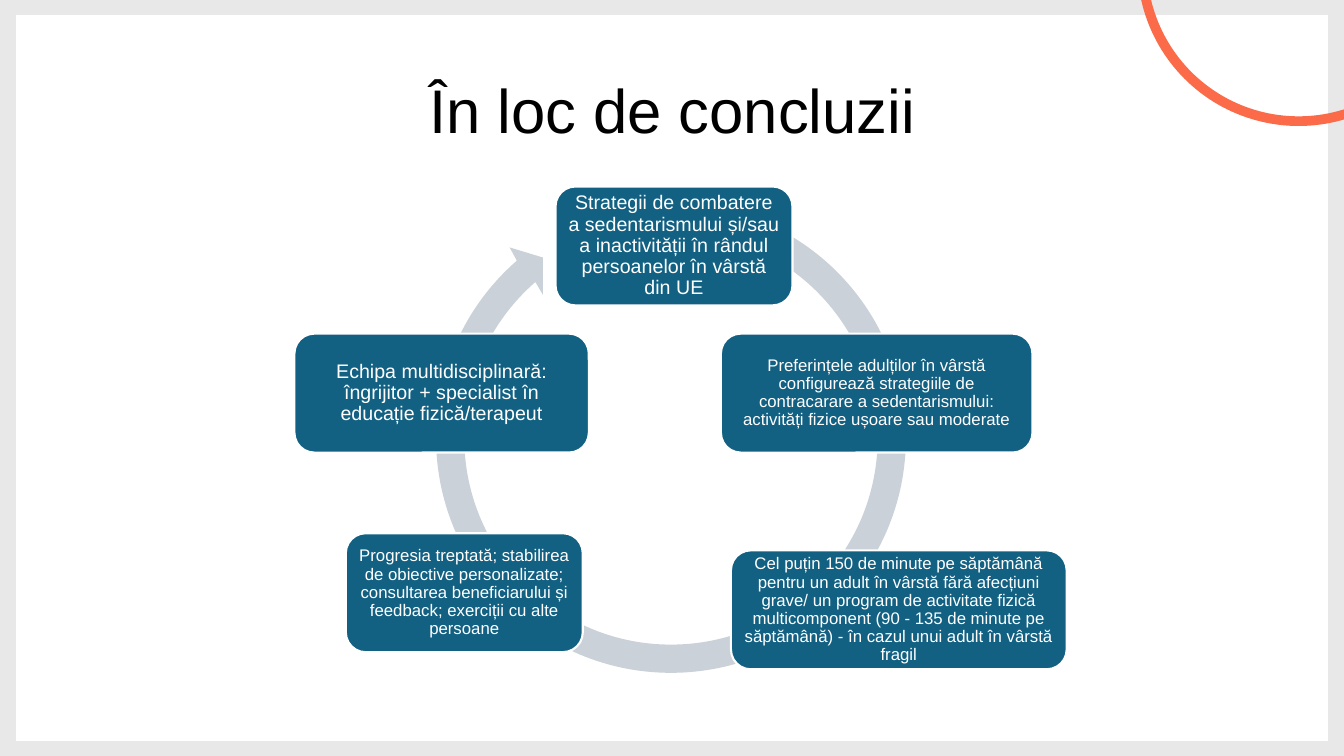
from dataclasses import dataclass
from math import cos, radians, sin, tan

from lxml import etree
from pptx import Presentation
from pptx.dml.color import RGBColor
from pptx.enum.shapes import MSO_SHAPE
from pptx.enum.text import MSO_ANCHOR, PP_ALIGN
from pptx.oxml.ns import qn
from pptx.util import Inches, Pt

RECTANGLE = MSO_SHAPE.RECTANGLE
ROUNDED = MSO_SHAPE.ROUNDED_RECTANGLE
DONUT = MSO_SHAPE.DONUT
MIDDLE = MSO_ANCHOR.MIDDLE
CENTER = PP_ALIGN.CENTER


@dataclass(frozen=True)
class Theme:
    """Colours, font and type sizes of the deck."""
    backdrop: str = "E8E8E8"
    panel: str = "FFFFFF"
    accent: str = "FB6B49"
    arrow: str = "CAD1D8"
    node: str = "126082"
    title: str = "000000"
    node_text: str = "FFFFFF"
    font: str = "Arial"
    title_size: int = 44
    large_size: int = 14
    small_size: int = 12


THEME = Theme()
NODE_HEIGHT = 1.18
RING_SIZE = 4.95
RING_ANGLES = (-70, 0, 90, 180, 229)
ARROWHEAD = ((-1.6, -1.89), (-1.27, -1.79), (-1.27, -1.42))
INSETS = {THEME.large_size: 0.06, THEME.small_size: 0.05}
NODES = [
    (2.59, 0, 2.35, THEME.large_size,
     "Strategii de combatere a sedentarismului și/sau a inactivității în rândul "
     "persoanelor în vârstă din UE"),
    (4.23, 1.46, 3.09, THEME.small_size,
     "Preferințele adulților în vârstă configurează strategiile de contracarare a "
     "sedentarismului: activități fizice ușoare sau moderate"),
    (4.33, 3.61, 3.33, THEME.small_size,
     "Cel puțin 150 de minute pe săptămână pentru un adult în vârstă fără afecțiuni "
     "grave/ un program de activitate fizică multicomponent (90 - 135 de minute pe "
     "săptămână) - în cazul unui adult în vârstă fragil"),
    (0.51, 3.44, 2.35, THEME.small_size,
     "Progresia treptată; stabilirea de obiective personalizate; consultarea "
     "beneficiarului și feedback; exerciții cu alte persoane"),
    (0, 1.46, 2.92, THEME.large_size,
     "Echipa multidisciplinară: îngrijitor + specialist în educație fizică/terapeut"),
]


def paint(shape, fill, line=None):
    """Give a shape a flat fill and an optional outline."""
    shape.shadow.inherit = False
    shape.fill.solid()
    shape.fill.fore_color.rgb = RGBColor.from_string(fill)
    if line:
        shape.line.color.rgb = RGBColor.from_string(line)
        shape.line.width = Pt(1.5)
    else:
        shape.line.fill.background()


def add_block(page, kind, box, fill, line=None):
    """Add a painted preset shape in the given box."""
    shape = page.shapes.add_shape(kind, *map(Inches, box))
    paint(shape, fill, line)
    return shape


def write_text(shape, text, *, size, color, inset_x, inset_y):
    """Write one centred paragraph into a shape."""
    frame = shape.text_frame
    frame.word_wrap = True
    frame.vertical_anchor = MIDDLE
    frame.margin_left = frame.margin_right = Inches(inset_x)
    frame.margin_top = frame.margin_bottom = Inches(inset_y)
    para = frame.paragraphs[0]
    para.alignment = CENTER
    para.line_spacing = 0.9
    span = para.add_run()
    span.text = text
    span.font.size = Pt(size)
    span.font.name = THEME.font
    span.font.color.rgb = RGBColor.from_string(color)


def add_backdrop(page, box):
    """Draw the grey border, the white panel and the corner ring."""
    left, top, width, height = box
    page.background.fill.solid()
    page.background.fill.fore_color.rgb = RGBColor.from_string(THEME.backdrop)
    panel = (left + 0.16, top + 0.15, width - 0.32, height - 0.3)
    add_block(page, RECTANGLE, panel, THEME.panel)
    ring = add_block(page, DONUT, (left + width - 2.05, top - 1.95, 3.2, 3.2), THEME.accent)
    ring.adjustments[0] = 0.03


def add_title(page, box, text):
    """Place the slide title."""
    title = page.shapes.add_textbox(*map(Inches, box))
    write_text(title, text, size=THEME.title_size, color=THEME.title, inset_x=0.1, inset_y=0.05)


def add_step(outline, tag, *points):
    """Append one drawing step, with points measured from the ring's centre."""
    step = etree.SubElement(outline, qn(tag))
    for across, down in points:
        etree.SubElement(step, qn("a:pt"), x=str(Inches(RING_SIZE / 2 + across)),
                         y=str(Inches(RING_SIZE / 2 + down)))


def on_circle(radius, angle, reach=0):
    """Return a point on a circle, moved along its tangent by reach radii."""
    turn = radians(angle)
    return (radius * (cos(turn) - reach * sin(turn)), radius * (sin(turn) + reach * cos(turn)))


def add_arc(outline, radius, angles):
    """Append an arc as one curve between each pair of angles."""
    for first, last in zip(angles, angles[1:]):
        reach = 4 / 3 * tan(radians(last - first) / 4)
        add_step(outline, "a:cubicBezTo", on_circle(radius, first, reach),
                 on_circle(radius, last, -reach), on_circle(radius, last))


def add_cycle_arrow(page, left, top):
    """Draw the open ring that ends in an arrowhead."""
    builder = page.shapes.build_freeform(Inches(left), Inches(top))
    builder.add_line_segments([(Inches(left + RING_SIZE), Inches(top + RING_SIZE))], close=False)
    arrow = builder.convert_to_shape()
    outline = next(arrow.element.iter(qn("a:path")))
    for step in list(outline):
        outline.remove(step)
    add_step(outline, "a:moveTo", on_circle(2.33, RING_ANGLES[0]))
    add_arc(outline, 2.33, RING_ANGLES)
    for corner in (*ARROWHEAD, on_circle(2.05, RING_ANGLES[-1])):
        add_step(outline, "a:lnTo", corner)
    add_arc(outline, 2.05, RING_ANGLES[::-1])
    add_step(outline, "a:close")
    paint(arrow, THEME.arrow)


def add_cycle(page, box, nodes):
    """Draw the circular arrow and the nodes around it."""
    left, top, _, _ = box
    add_cycle_arrow(page, left + 1.26, top + 0.02)
    for across, down, width, size, text in nodes:
        place = (left + across, top + down, width, NODE_HEIGHT)
        node = add_block(page, ROUNDED, place, THEME.node, THEME.panel)
        node.adjustments[0] = 0.167
        inset = INSETS[size]
        write_text(node, text, size=size, color=THEME.node_text, inset_x=inset, inset_y=inset)


def main():
    """Build and save the deck."""
    deck = Presentation()
    deck.slide_width = Inches(13.33)
    deck.slide_height = Inches(7.5)
    page = deck.slides.add_slide(deck.slide_layouts[6])
    add_backdrop(page, (0, 0, 13.33, 7.5))
    add_title(page, (0.92, 0.4, 11.5, 1.45), "În loc de concluzii")
    add_cycle(page, (2.92, 1.85, 7.66, 4.83), NODES)
    deck.save("out.pptx")


if __name__ == "__main__":
    main()
